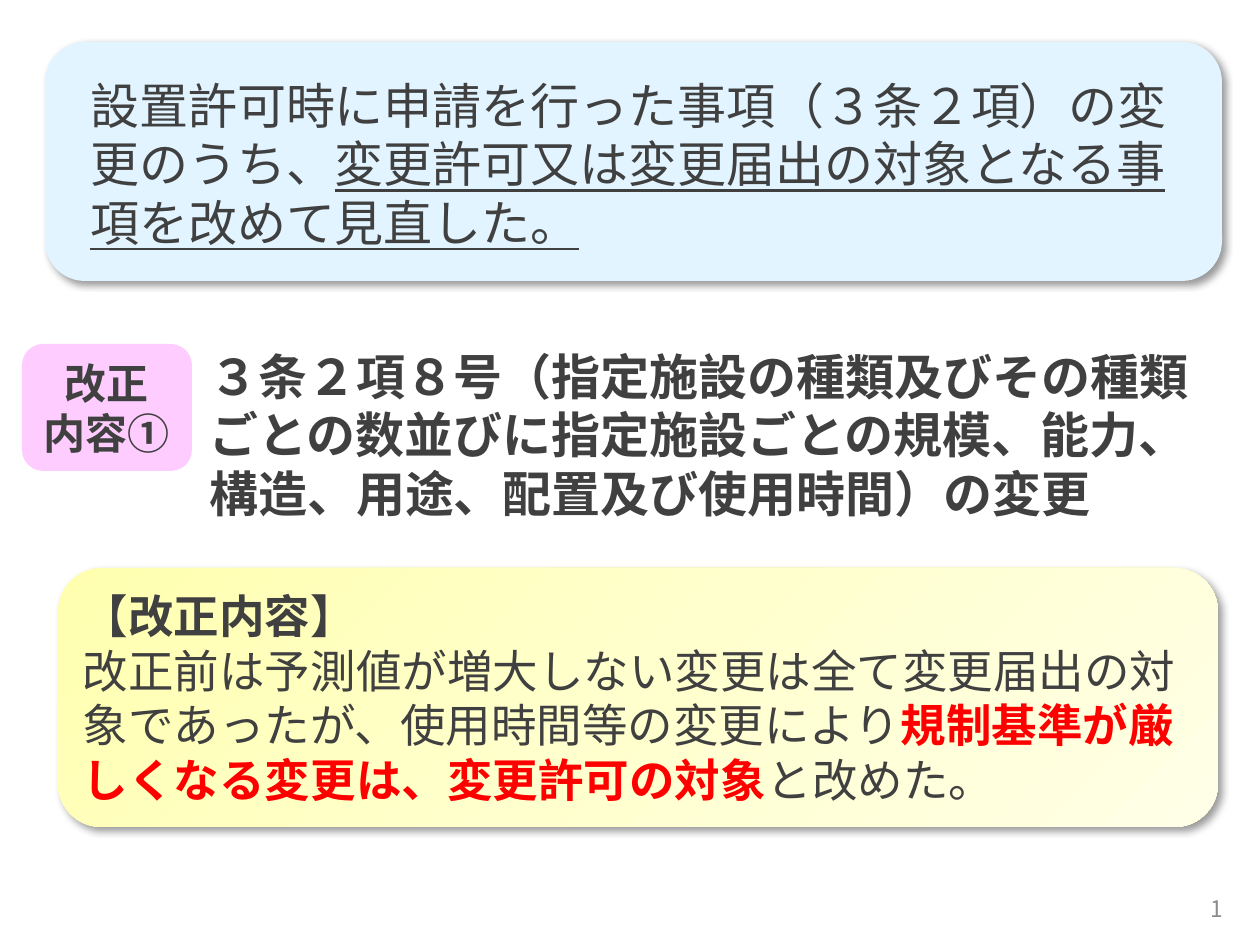
from pptx import Presentation, util as u
from pptx.dml.color import RGBColor
from pptx.enum import shapes, text
from pptx.oxml import parse_xml
from pptx.oxml.ns import nsdecls, qn
from lxml import etree

PX = 914400 / 126  # EMU per px
THEME = dict(
    font="Noto Sans CJK JP",
    ink="404040", red="FF0000", grey="8C8C8C",
    blue="E1F4FF", pink="FFCCFF",
    cream=[(0, "FFFFAF"), (50, "FFFFCE"), (100, "FFFFE7")],
    lead=28, body=26, tag=24, num=13,
)
ALIGN = text.PP_ALIGN


def write(shape, paras, size, color="ink", bold=False, align=ALIGN.LEFT,
          anchor=text.MSO_ANCHOR.TOP):
    """Each paragraph is a list of (words, changes) runs."""
    frame = shape.text_frame
    frame.word_wrap = True
    frame.vertical_anchor = anchor
    for i, runs in enumerate(paras):
        para = frame.paragraphs[0] if i == 0 else frame.add_paragraph()
        para.alignment = align
        for words, diff in runs:
            run = para.add_run()
            run.text = words
            font = run.font
            font.name = THEME["font"]
            font.size = u.Pt(THEME[size])
            font.bold = diff.get("bold", bold)
            font.underline = diff.get("line", False)
            font.color.rgb = RGBColor.from_string(THEME[diff.get("color", color)])
            east = etree.SubElement(run._r.get_or_add_rPr(), qn("a:ea"))
            east.set("typeface", THEME["font"])


def panel(box, fill, shade=False):
    """Rounded box with a flat or graded fill and an optional soft shadow."""
    shape = slide.shapes.add_shape(
        shapes.MSO_SHAPE.ROUNDED_RECTANGLE, *[int(n * PX) for n in box])
    shape.line.fill.background()
    shape.shadow.inherit = False
    props = shape._element.spPr
    if isinstance(fill, str):
        shape.fill.solid()
        shape.fill.fore_color.rgb = RGBColor.from_string(fill)
    else:
        stops = "".join(
            f'<a:gs pos="{pos * 1000}"><a:srgbClr val="{tone}"/></a:gs>'
            for pos, tone in fill)
        props.find(qn("a:prstGeom")).addnext(parse_xml(
            f'<a:gradFill {nsdecls("a")} rotWithShape="1"><a:gsLst>{stops}</a:gsLst>'
            '<a:lin ang="2700000" scaled="0"/></a:gradFill>'))
    if shade:
        props.find(qn("a:effectLst")).append(parse_xml(
            f'<a:outerShdw {nsdecls("a")} blurRad="{u.Pt(4)}" dist="{u.Pt(3)}" '
            'dir="2700000" algn="tl" rotWithShape="0"><a:srgbClr val="000000">'
            '<a:alpha val="40000"/></a:srgbClr></a:outerShdw>'))
    return shape


deck = Presentation()
deck.slide_width, deck.slide_height = u.Inches(10), u.Inches(7.5)
slide = deck.slides.add_slide(deck.slide_layouts[6])

# Summary panel
panel((45, 42, 1177, 239), THEME["blue"], shade=True)

# Free text: page number, clause heading, summary
notes = [
    ((951, 883, 284, 50), [("1", {})],
     dict(size="num", color="grey", align=ALIGN.RIGHT,
          anchor=text.MSO_ANCHOR.MIDDLE)),
    ((197, 340, 1026, 190),
     [("３条２項８号（指定施設の種類及びその種類ごとの数並びに指定施設ごとの規模、"
       "能力、構造、用途、配置及び使用時間）の変更", {})],
     dict(size="lead", bold=True)),
    ((78, 69, 1133, 190),
     [("設置許可時に申請を行った事項（３条２項）の変更のうち、", {}),
      ("変更許可又は変更届出の対象となる事項を改めて見直した。", {"line": True})],
     dict(size="lead")),
]
for box, runs, form in notes:
    write(slide.shapes.add_textbox(*[int(n * PX) for n in box]), [runs], **form)

# Tag beside the clause heading
tag = panel((22, 344, 170, 127), THEME["pink"])
write(tag, [[("改正", {})], [("内容①", {})]], size="tag", bold=True,
      align=ALIGN.CENTER, anchor=text.MSO_ANCHOR.MIDDLE)

# Details of the revision
detail = panel((58, 568, 1160, 259), THEME["cream"], shade=True)
write(detail, [
    [("【改正内容】", {"bold": True})],
    [("改正前は予測値が増大しない変更は全て変更届出の対象であったが、"
      "使用時間等の変更により", {}),
     ("規制基準が厳しくなる変更は、変更許可の対象", {"color": "red", "bold": True}),
     ("と改めた。", {})],
], size="body", anchor=text.MSO_ANCHOR.MIDDLE)

deck.save("out.pptx")
